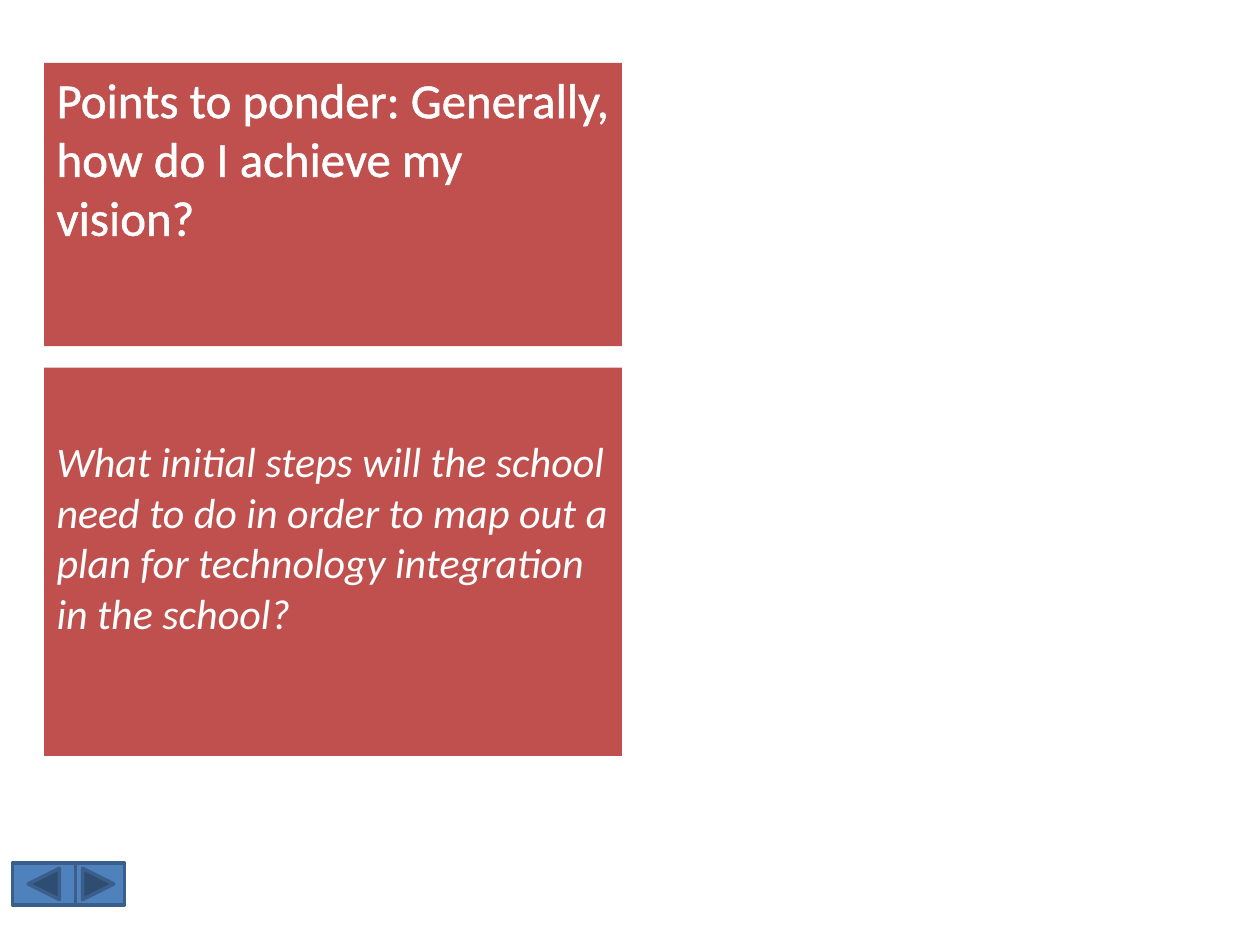
from lxml.etree import SubElement
from pptx import Presentation
from pptx.dml.color import RGBColor as RGB
from pptx.enum.shapes import MSO_SHAPE as SHAPE
from pptx.enum.text import MSO_ANCHOR as ANCHOR, PP_ALIGN as ALIGN
from pptx.oxml.ns import qn
from pptx.util import Cm, Pt

COLORS = {"panel": "C0504D", "button": "4F81BD", "edge": "3A5F8C", "text": "FFFFFF"}


def color(name):
    return RGB.from_string(COLORS[name])


def write(tf, text, size=24, italic=False, outline=None, anchor=ANCHOR.TOP, bottom=0.13):
    tf.word_wrap = True
    tf.vertical_anchor = anchor
    tf.margin_bottom = Cm(bottom)
    p = tf.paragraphs[0]
    p.alignment = ALIGN.LEFT
    r = p.add_run()
    r.text = text
    r.font.name = "Calibri"
    r.font.size = Pt(size)
    r.font.italic = italic
    if outline:
        ln = SubElement(r.font._element, qn("a:ln"), w=str(Pt(outline)))
        fill = SubElement(ln, qn("a:solidFill"))
        SubElement(fill, qn("a:srgbClr"), val=COLORS["text"])
        r.font._element.insert(0, ln)
    r.font.color.rgb = color("text")


class SlideBuilder:
    left, width = 0.89, 11.65
    button_top, button_height = 17.4, 0.84

    def __init__(self, prs):
        self.s = prs.slides.add_slide(prs.slide_layouts[6])

    def shape(self, kind, x, y, w, h, fill):
        sp = self.s.shapes.add_shape(kind, Cm(x), Cm(y), Cm(w), Cm(h))
        sp.shadow.inherit = False
        sp.fill.solid()
        sp.fill.fore_color.rgb = color(fill)
        return sp

    def panel(self, y, h, text, **fmt):
        sp = self.shape(SHAPE.RECTANGLE, self.left, y, self.width, h, "panel")
        sp.line.fill.background()
        write(sp.text_frame, text, **fmt)

    def button(self, kind, x, w):
        sp = self.shape(kind, x, self.button_top, w, self.button_height, "button")
        sp.line.color.rgb = color("edge")
        sp.line.width = Pt(2)


def main():
    prs = Presentation()
    prs.slide_width, prs.slide_height = Cm(25.4), Cm(19.05)
    slide = SlideBuilder(prs)
    slide.panel(1.27, 5.71, "Points to ponder: Generally, how do I achieve my vision?",
                size=28, outline=1.45)
    slide.panel(7.41, 7.83,
                "What initial steps will the school need to do in order to map out "
                "a plan for technology integration in the school?",
                italic=True, anchor=ANCHOR.MIDDLE, bottom=1.14)
    slide.button(SHAPE.ACTION_BUTTON_FORWARD_OR_NEXT, 1.45, 1.06)
    slide.button(SHAPE.ACTION_BUTTON_BACK_OR_PREVIOUS, 0.25, 1.27)
    prs.save("out.pptx")


if __name__ == "__main__":
    main()
